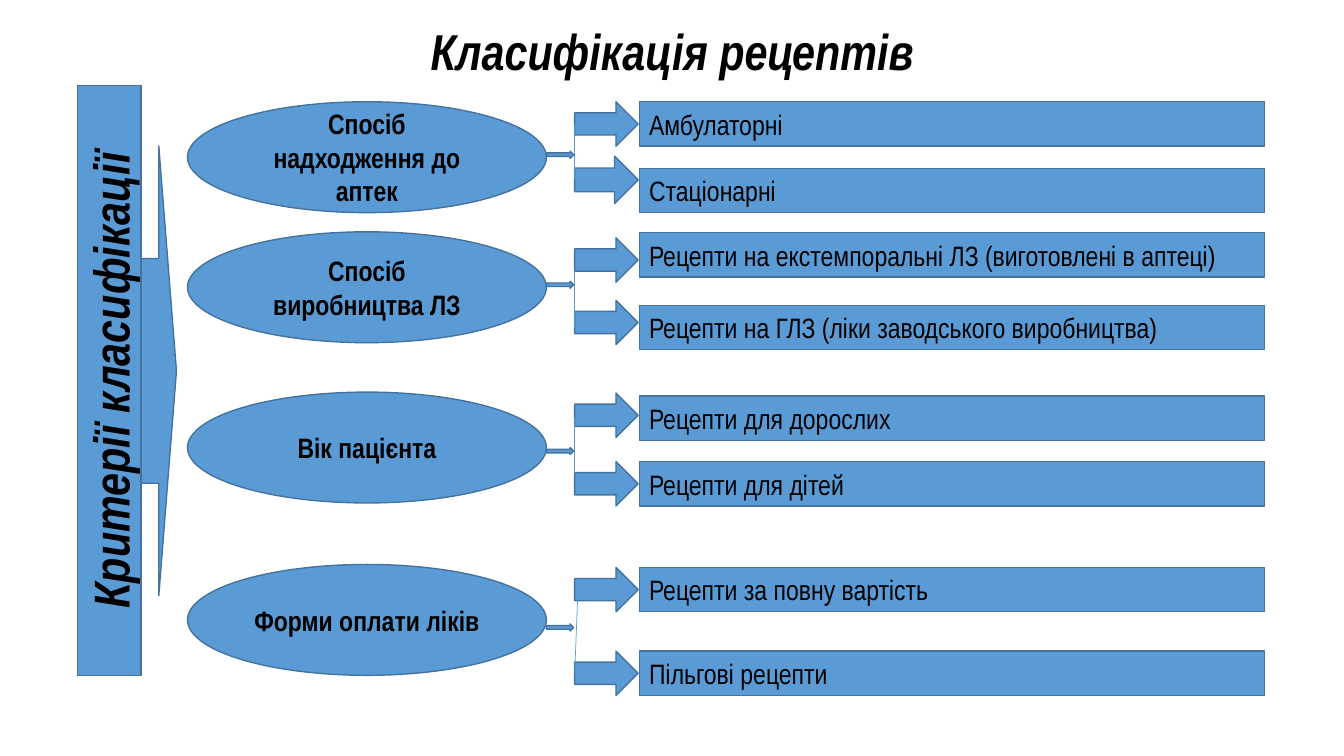
from dataclasses import dataclass

from lxml.etree import SubElement
from pptx import Presentation
from pptx.dml.color import RGBColor
from pptx.enum.shapes import MSO_CONNECTOR as Connector, MSO_SHAPE as Preset
from pptx.enum.text import MSO_ANCHOR as Anchor, PP_ALIGN as Align
from pptx.oxml.ns import qn
from pptx.util import Inches, Pt

COLORS = {"fill": "5B9BD5", "outline": "43739E", "text": "000000"}
FONT = "Arial Narrow"
BAR_HEIGHT = 0.44


@dataclass
class Criterion:
    """A criterion with its recipe types and offsets from the top of its row."""
    name: str
    top: float
    types: tuple
    bars: tuple
    arrows: tuple
    pointer: float
    link: tuple
    link_shift: float = 0
    last_arrow_height: float = BAR_HEIGHT


CRITERIA = [
    Criterion("Спосіб надходження до аптек", 1.01, ("Амбулаторні", "Стаціонарні"),
              (0, 0.66), (0, 0.54), 0.49, (0.22, 0.77), last_arrow_height=0.47),
    Criterion("Спосіб виробництва ЛЗ", 2.3,
              ("Рецепти на екстемпоральні ЛЗ (виготовлені в аптеці)",
               "Рецепти на ГЛЗ (ліки заводського виробництва)"),
              (0.01, 0.73), (0.06, 0.68), 0.49, (0.4, 0.95)),
    Criterion("Вік пацієнта", 3.89, ("Рецепти для дорослих", "Рецепти для дітей"),
              (0.04, 0.69), (0.01, 0.69), 0.55, (0.26, 0.8)),
    Criterion("Форми оплати ліків", 5.6, ("Рецепти за повну вартість", "Пільгові рецепти"),
              (0.03, 0.86), (0.03, 0.86), 0.59, (0.31, 1.08), link_shift=0.03),
]


def color(name):
    """Return a palette colour."""
    return RGBColor.from_string(COLORS[name])


def write(shape, text, size=20, bold=False, italic=False, align=Align.LEFT, wrap=True):
    """Put one formatted paragraph in a shape."""
    frame = shape.text_frame
    frame.word_wrap = wrap
    frame.vertical_anchor = Anchor.MIDDLE
    para = frame.paragraphs[0]
    para.alignment = align
    span = para.add_run()
    span.text = text
    font = span.font
    font.name, font.size, font.bold, font.italic = FONT, Pt(size), bold, italic
    font.color.rgb = color("text")


def add_block(page, preset, left, top, width, height):
    """Add a filled and outlined preset shape."""
    block = page.shapes.add_shape(preset, *map(Inches, (left, top, width, height)))
    block.shadow.inherit = False
    block.fill.solid()
    block.fill.fore_color.rgb = color("fill")
    block.line.color.rgb = color("outline")
    block.line.width = Pt(1)
    return block


def add_link(page, *ends):
    """Add a thin line between two points."""
    link = page.shapes.add_connector(Connector.STRAIGHT, *map(Inches, ends))
    link.line.color.rgb = color("fill")
    link.line.width = Pt(0.5)
    SubElement(link.element.spPr, qn("a:effectLst"))


def add_title(page, left, top, width, height):
    """Place and fill the title placeholder."""
    title = page.shapes.title
    title.left, title.top, title.width, title.height = map(Inches, (left, top, width, height))
    write(title, "Класифікація рецептів", size=36, bold=True, italic=True, wrap=False)


def add_sidebar(page, left, top, width, height):
    """Add the vertical heading and the arrow leading out of it."""
    heading = add_block(page, Preset.RECTANGLE, left, top, width, height)
    write(heading, "Критерії класифікації", size=36, bold=True, italic=True, align=Align.CENTER)
    heading.element.txBody.bodyPr.set("vert", "vert270")
    add_block(page, Preset.RIGHT_ARROW, left + width, top + 0.6, 0.35, 4.46)


def add_criterion(page, criterion, left, top, width, height):
    """Add a criterion ellipse, its arrows and its two recipe types."""
    ellipse_width, arrow_left, bar_left = 3.56, left + 3.84, left + 4.48
    ellipse = add_block(page, Preset.OVAL, left, top, ellipse_width, height)
    write(ellipse, criterion.name, bold=True, align=Align.CENTER)
    for text, offset in zip(criterion.types, criterion.bars):
        bar = add_block(page, Preset.RECTANGLE, bar_left, top + offset,
                        left + width - bar_left, BAR_HEIGHT)
        write(bar, text)
    arrow_heights = (BAR_HEIGHT, criterion.last_arrow_height)
    for offset, arrow_height in zip(criterion.arrows, arrow_heights):
        add_block(page, Preset.RIGHT_ARROW, arrow_left, top + offset, 0.63, arrow_height)
    start, end = criterion.link
    add_link(page, arrow_left + criterion.link_shift, top + start, arrow_left, top + end)
    add_block(page, Preset.RIGHT_ARROW, left + ellipse_width, top + criterion.pointer, 0.27, 0.07)


def main():
    """Build and save the slide."""
    deck = Presentation()
    deck.slide_width, deck.slide_height = Inches(13.33), Inches(7.5)
    page = deck.slides.add_slide(deck.slide_layouts.get_by_name("Title Only"))
    add_title(page, 4.17, 0.14, 5.06, 0.71)
    for criterion in CRITERIA:
        add_criterion(page, criterion, 1.86, criterion.top, 10.68, 1.1)
    add_sidebar(page, 0.77, 0.85, 0.63, 5.85)
    deck.save("out.pptx")


if __name__ == "__main__":
    main()
